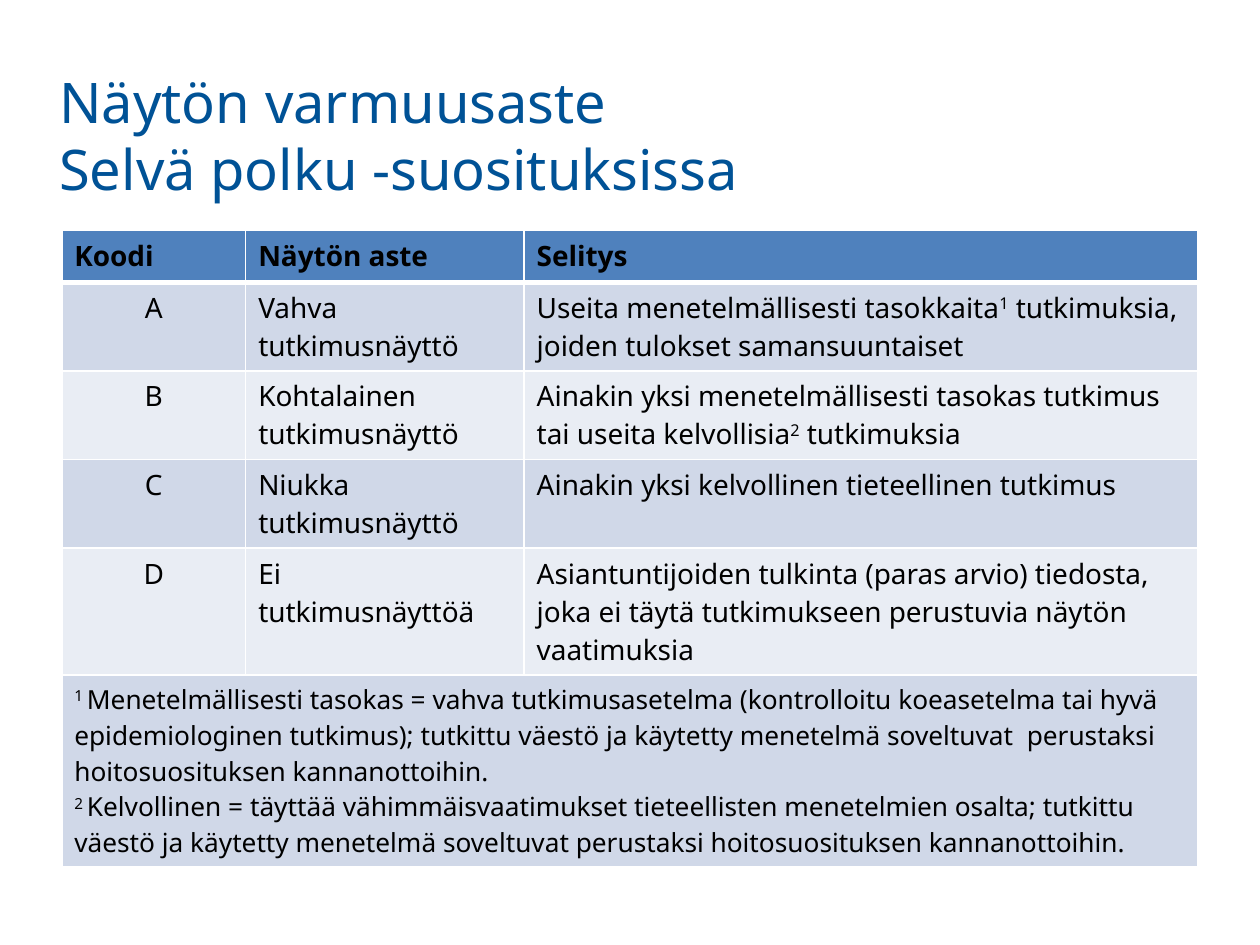
"""Build a slide that explains the grades of evidence in a table."""
from dataclasses import dataclass

from lxml import etree
from pptx import Presentation
from pptx.dml.color import RGBColor
from pptx.enum import text as t
from pptx.oxml import ns
from pptx.util import Inches, Pt


@dataclass(frozen=True)
class Theme:
    """Hold the colours, font and type sizes of the slide."""
    font: str = "Noto Sans"
    title: str = "005296"
    ink: str = "000000"
    head: str = "4F81BD"
    bands: tuple = ("D0D8E8", "E9EDF4")
    line: str = "FFFFFF"
    big: int = 32
    body: int = 16
    note: int = 15


THEME = Theme()
WIDTHS = (1.46, 2.21, 5.35)
ROW = 0.41
HEAD = ("Koodi", "Näytön aste", "Selitys")
GRADES = (
    ("A", "Vahva\ntutkimusnäyttö",
     "Useita menetelmällisesti tasokkaita^1^ tutkimuksia, joiden tulokset samansuuntaiset"),
    ("B", "Kohtalainen\ntutkimusnäyttö",
     "Ainakin yksi menetelmällisesti tasokas tutkimus tai useita kelvollisia^2^ tutkimuksia"),
    ("C", "Niukka\ntutkimusnäyttö", "Ainakin yksi kelvollinen tieteellinen tutkimus"),
    ("D", "Ei\ntutkimusnäyttöä",
     "Asiantuntijoiden tulkinta (paras arvio) tiedosta, joka ei täytä tutkimukseen "
     "perustuvia näytön vaatimuksia"),
)
NOTES = (
    "^1 ^Menetelmällisesti tasokas = vahva tutkimusasetelma (kontrolloitu koeasetelma tai "
    "hyvä epidemiologinen tutkimus); tutkittu väestö ja käytetty menetelmä soveltuvat  "
    "perustaksi hoitosuosituksen kannanottoihin.\n"
    "^2 ^Kelvollinen = täyttää vähimmäisvaatimukset tieteellisten menetelmien osalta; "
    "tutkittu väestö ja käytetty menetelmä soveltuvat perustaksi hoitosuosituksen "
    "kannanottoihin."
)


def add_run(para, words, size, color, bold=False, raised=False):
    """Add one styled run, raised as superscript if asked."""
    run = para.add_run()
    run.text = words
    font = run.font
    font.name, font.size, font.bold = THEME.font, Pt(size), bold
    font.color.rgb = RGBColor.from_string(color)
    if raised:
        run._r.get_or_add_rPr().set("baseline", "30000")


def add_title(slide, lines):
    """Place the title and break it into lines."""
    title = slide.shapes.title
    title.left, title.top = Inches(0.37), Inches(0.44)
    title.width, title.height = Inches(9.02), Inches(1.26)
    title.text_frame.vertical_anchor = t.MSO_ANCHOR.MIDDLE
    para = title.text_frame.paragraphs[0]
    para.alignment = t.PP_ALIGN.LEFT
    for i, line in enumerate(lines):
        if i:
            para.add_line_break()
        add_run(para, line, THEME.big, THEME.title)


def set_edges(cell, top=1, base=1):
    """Draw the four borders of a cell with widths in points."""
    props = cell._tc.get_or_add_tcPr()
    for side, width in (("L", 1), ("R", 1), ("T", top), ("B", base)):
        edge = etree.SubElement(props, ns.qn(f"a:ln{side}"), w=str(Pt(width)))
        fill = etree.SubElement(edge, ns.qn("a:solidFill"))
        etree.SubElement(fill, ns.qn("a:srgbClr"), val=THEME.line)


def fill_cell(cell, words, size, color, bold=False, align=t.PP_ALIGN.LEFT):
    """Fill a cell, with marks between carets raised."""
    cell.fill.solid()
    cell.fill.fore_color.rgb = RGBColor.from_string(color)
    frame = cell.text_frame
    for i, line in enumerate(words.split("\n")):
        para = frame.add_paragraph() if i else frame.paragraphs[0]
        para.alignment = align
        for j, part in enumerate(line.split("^")):
            if part:
                add_run(para, part, size, THEME.ink, bold, raised=j % 2 == 1)


def add_grades(slide):
    """Add the table of grades with its notes in a merged last row."""
    count = len(GRADES) + 2
    frame = slide.shapes.add_table(count, len(WIDTHS), Inches(0.49), Inches(1.83),
                                   Inches(sum(WIDTHS)), Inches(ROW * count))
    table = frame.table
    for col, width in zip(table.columns, WIDTHS):
        col.width = Inches(width)
    for r in range(count):
        table.rows[r].height = Inches(ROW)
        for c in range(len(WIDTHS)):
            set_edges(table.cell(r, c), 3 if r == 1 else 1, 3 if r == 0 else 1)
    for c, words in enumerate(HEAD):
        fill_cell(table.cell(0, c), words, THEME.body, THEME.head, bold=True)
    for r, grade in enumerate(GRADES):
        for c, words in enumerate(grade):
            align = t.PP_ALIGN.LEFT if c else t.PP_ALIGN.CENTER
            fill_cell(table.cell(r + 1, c), words, THEME.body, THEME.bands[r % 2], align=align)
    last = table.cell(count - 1, 0)
    last.merge(table.cell(count - 1, len(WIDTHS) - 1))
    fill_cell(last, NOTES, THEME.note, THEME.bands[0])
    frame.height = Inches(4.56)


def main():
    """Build and save the slide."""
    deck = Presentation()
    deck.slide_width, deck.slide_height = Inches(10), Inches(7.5)
    slide = deck.slides.add_slide(deck.slide_layouts[5])
    add_title(slide, ("Näytön varmuusaste", "Selvä polku -suosituksissa"))
    add_grades(slide)
    deck.save("out.pptx")


if __name__ == "__main__":
    main()
